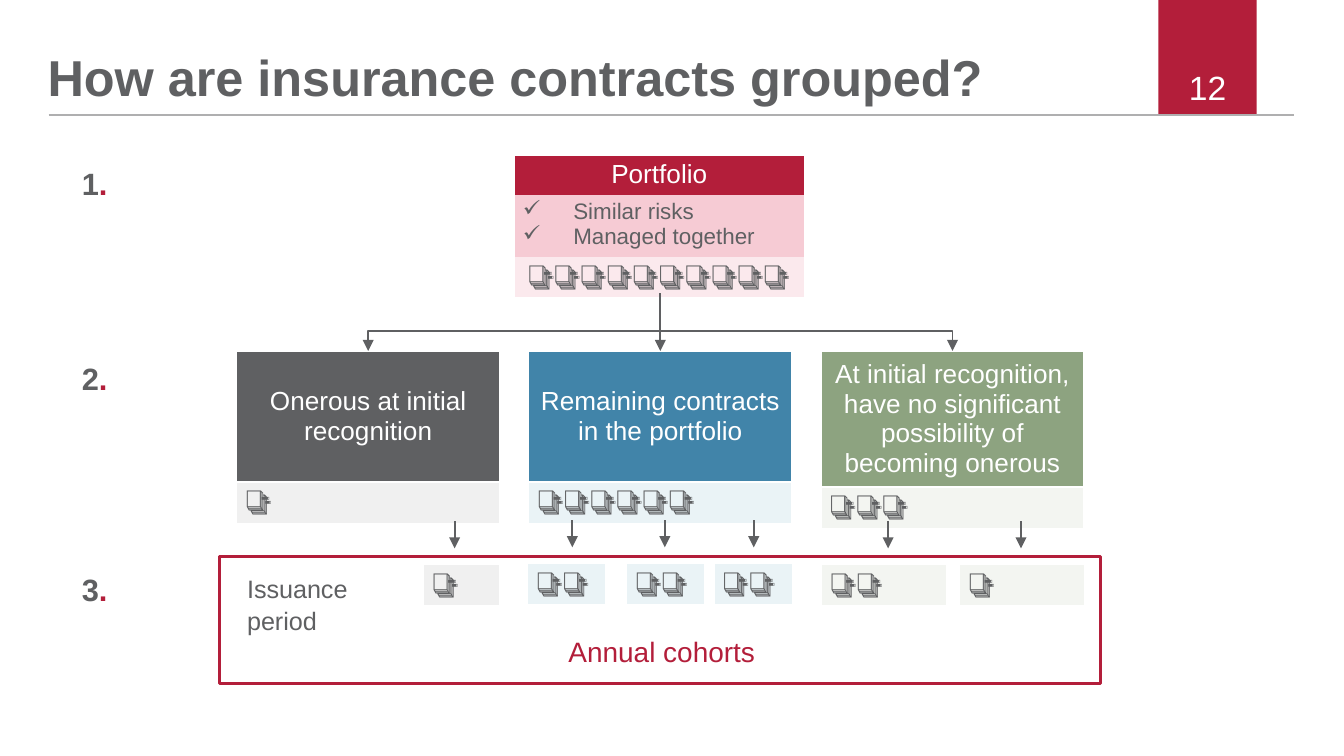
from lxml.etree import SubElement
from pptx import Presentation
from pptx.dml.color import RGBColor
from pptx.enum.shapes import MSO_CONNECTOR, MSO_SHAPE
from pptx.enum.text import MSO_ANCHOR, PP_ALIGN
from pptx.oxml.ns import qn
from pptx.util import Pt

# Content
TITLE = "How are insurance contracts grouped?"
PAGE = "12"
DOC = "📑"
PORTFOLIO = "Portfolio"
CRITERIA = ["Similar risks", "Managed together"]
PORTFOLIO_DOCS = 10
# Group name, header fill, light fill, number of contracts
GROUPS = [
    ("Onerous at initial recognition", "dark", "dark_tint", 1),
    ("Remaining contracts in the portfolio", "blue", "blue_tint", 6),
    ("At initial recognition, have no significant possibility of "
     "becoming onerous", "green", "green_tint", 3),
]
# Group index, left, top, width, number of contracts, arrow x
COHORTS = [
    (0, 226.8, 302.4, 41, 1, 243.6),
    (1, 282.6, 301.8, 42.2, 2, 306.6),
    (1, 335.6, 301.8, 42.2, 2, 356.2),
    (1, 382.4, 301.8, 42.2, 2, 403.8),
    (2, 440, 302.4, 67, 2, 475.8),
    (2, 514, 302.4, 67.4, 1, 547),
]
STEPS = [("1", 83.5), ("2", 187.9), ("3", 300.6)]
PERIOD, ANNUAL = "Issuance period", "Annual cohorts"

THEME = dict(
    font="Arial",
    colors=dict(red="B31E3A", pink="F6CBD4", pale="FBE9ED", dark="5F6062",
                dark_tint="F0F0F0", blue="4184A9", blue_tint="EAF3F6",
                green="8DA380", green_tint="F3F5F1", rule="AFAFB0",
                white="FFFFFF"),
    title=27, page=18, step=16.5, annual=15, cell=14, period=13.5, criteria=12,
)
NO_STYLE = "{2D5ABB26-0587-4C30-8999-92F81FD0307C}"
GROUP_X, GROUP_Y, GROUP_W, GROUP_STEP = 126.7, 188, 141.1, 156.5
HEADER_H, DOCS_H = 70.2, 21.8

prs = Presentation()
prs.slide_width, prs.slide_height = Pt(720), Pt(405)
s = prs.slides.add_slide(prs.slide_layouts[6])


def color(name):
    return RGBColor.from_string(THEME["colors"][name])


def write(tf, paragraphs, size="cell", fill="dark", bold=False, align=None,
          anchor=None, insets=(7.2, 3.6, 7.2, 3.6), spacing=None, bullet=None):
    """Each paragraph is a string or a list of (text, colour) runs."""
    tf.word_wrap = True
    if anchor is not None:
        tf.vertical_anchor = anchor
    tf.margin_left, tf.margin_top, tf.margin_right, tf.margin_bottom = map(Pt, insets)
    for i, runs in enumerate(paragraphs):
        p = tf.paragraphs[0] if i == 0 else tf.add_paragraph()
        p.alignment = align
        if spacing:
            p.line_spacing = spacing
        if bullet:
            pPr = p._p.get_or_add_pPr()
            pPr.set("marL", str(Pt(27)))
            pPr.set("indent", str(-Pt(27)))
            SubElement(pPr, qn("a:buChar")).set("char", bullet)
        for text, shade in [(runs, fill)] if isinstance(runs, str) else runs:
            r = p.add_run()
            r.text = text
            r.font.name, r.font.size = THEME["font"], Pt(THEME[size])
            r.font.bold, r.font.color.rgb = bold, color(shade)


def text_box(x, y, w, h, paragraphs, **fmt):
    write(s.shapes.add_textbox(Pt(x), Pt(y), Pt(w), Pt(h)).text_frame,
          paragraphs, **fmt)


def rect(x, y, w, h, fill=None, line=None):
    sp = s.shapes.add_shape(MSO_SHAPE.RECTANGLE, Pt(x), Pt(y), Pt(w), Pt(h))
    sp.shadow.inherit = False
    if fill:
        sp.fill.solid()
        sp.fill.fore_color.rgb = color(fill)
    else:
        sp.fill.background()
    if line:
        sp.line.color.rgb, sp.line.width = color(line), Pt(1.5)
    else:
        sp.line.fill.background()


def line(x1, y1, x2, y2, shade="dark", width=1, arrow=True, bent=False):
    kind = MSO_CONNECTOR.ELBOW if bent else MSO_CONNECTOR.STRAIGHT
    c = s.shapes.add_connector(kind, Pt(x1), Pt(y1), Pt(x2), Pt(y2))
    c.line.color.rgb, c.line.width = color(shade), Pt(width)
    spPr = c._element.spPr
    if bent:
        spPr.find(qn("a:prstGeom")).set("prst", "bentConnector2")
    if arrow:
        SubElement(c.line._get_or_add_ln(), qn("a:tailEnd")).set("type", "triangle")
    SubElement(spPr, qn("a:effectLst"))


def border(tcPr, side, width):
    ln = SubElement(tcPr, qn("a:" + side), w=str(Pt(width)))
    fill = SubElement(ln, qn("a:solidFill"))
    SubElement(fill, qn("a:srgbClr")).set("val", THEME["colors"]["white"])


def table(x, y, w, rows, insets, borders=True):
    """Each row is (height, fill, paragraphs, text format)."""
    height = sum(row[0] for row in rows)
    tbl = s.shapes.add_table(len(rows), 1, Pt(x), Pt(y), Pt(w), Pt(height)).table
    tbl.first_row = tbl.horz_banding = False
    tbl._tbl.tblPr.find(qn("a:tableStyleId")).text = NO_STYLE
    for i, (h, fill, paragraphs, fmt) in enumerate(rows):
        tbl.rows[i].height = Pt(h)
        cell = tbl.cell(i, 0)
        if borders:
            for side in ("lnL", "lnR", "lnT", "lnB"):
                border(cell._tc.get_or_add_tcPr(), side, 1)
        cell.fill.solid()
        cell.fill.fore_color.rgb = color(fill)
        fmt = dict(fmt)
        cell.vertical_anchor = fmt.pop("anchor", MSO_ANCHOR.TOP)
        left, top, right, bottom = map(Pt, insets)
        cell.margin_left, cell.margin_right = left, right
        cell.margin_top, cell.margin_bottom = top, bottom
        write(cell.text_frame, paragraphs, **fmt)
        cell.text_frame.word_wrap = None


# Page header
rect(620.6, 0, 52.6, 61.6, fill="red")
line(26, 61.6, 693.4, 61.6, shade="rule", width=1.2, arrow=False)
text_box(496, 36, 168, 21.6, [PAGE], size="page", fill="white",
         align=PP_ALIGN.RIGHT, anchor=MSO_ANCHOR.MIDDLE)
text_box(25.5, 0, 563, 57.6, [TITLE], size="title", bold=True, spacing=0.9,
         anchor=MSO_ANCHOR.BOTTOM, insets=(0, 0, 0, 0))

# Portfolio
centre = dict(align=PP_ALIGN.CENTER)
table(275.8, 83.5, 154.8, [
    (20, "red", [PORTFOLIO], dict(centre, fill="white")),
    (33.2, "pink", CRITERIA, dict(size="criteria", bullet="✓")),
    (20.2, "pale", [DOC * PORTFOLIO_DOCS], centre),
], insets=(4.3, 2.2, 4.3, 2.2), borders=False)

# Groups
CELL_INSETS = (5, 2.8, 5, 2.8)
header = dict(centre, fill="white", anchor=MSO_ANCHOR.MIDDLE)
for i, (name, fill, tint, count) in enumerate(GROUPS):
    table(GROUP_X + i * GROUP_STEP, GROUP_Y, GROUP_W, [
        (HEADER_H, fill, [name], header),
        (DOCS_H, tint, [DOC * count], {}),
    ], insets=CELL_INSETS)

# Branches from the portfolio to the groups
left, middle, right = (GROUP_X + GROUP_W / 2 + i * GROUP_STEP for i in range(3))
for end in (left, right):
    line(middle, 177.2, end, GROUP_Y, bent=True)
line(middle, 157, middle, GROUP_Y)

# Annual cohorts
for group, x, y, w, count, arrow_x in COHORTS:
    table(x, y, w, [(DOCS_H, GROUPS[group][2], [DOC * count], {})],
          insets=CELL_INSETS)
    line(arrow_x, y - 23, arrow_x, y - 8.6)
text_box(125.3, 302.4, 108.7, 40.3, [PERIOD], size="period", spacing=1.07,
         insets=(7.2, 3.6, 14, 3.6))
rect(117.6, 298, 472.2, 68.4, line="red")
text_box(297.4, 332, 118, 33.8, [ANNUAL], size="annual", fill="red",
         anchor=MSO_ANCHOR.MIDDLE)

# Step numbers
for number, y in STEPS:
    text_box(36.7, y, 42.5, 27.4, [[(number, "dark"), (".", "red")]],
             size="step", bold=True, spacing=1.07)

prs.save("out.pptx")
